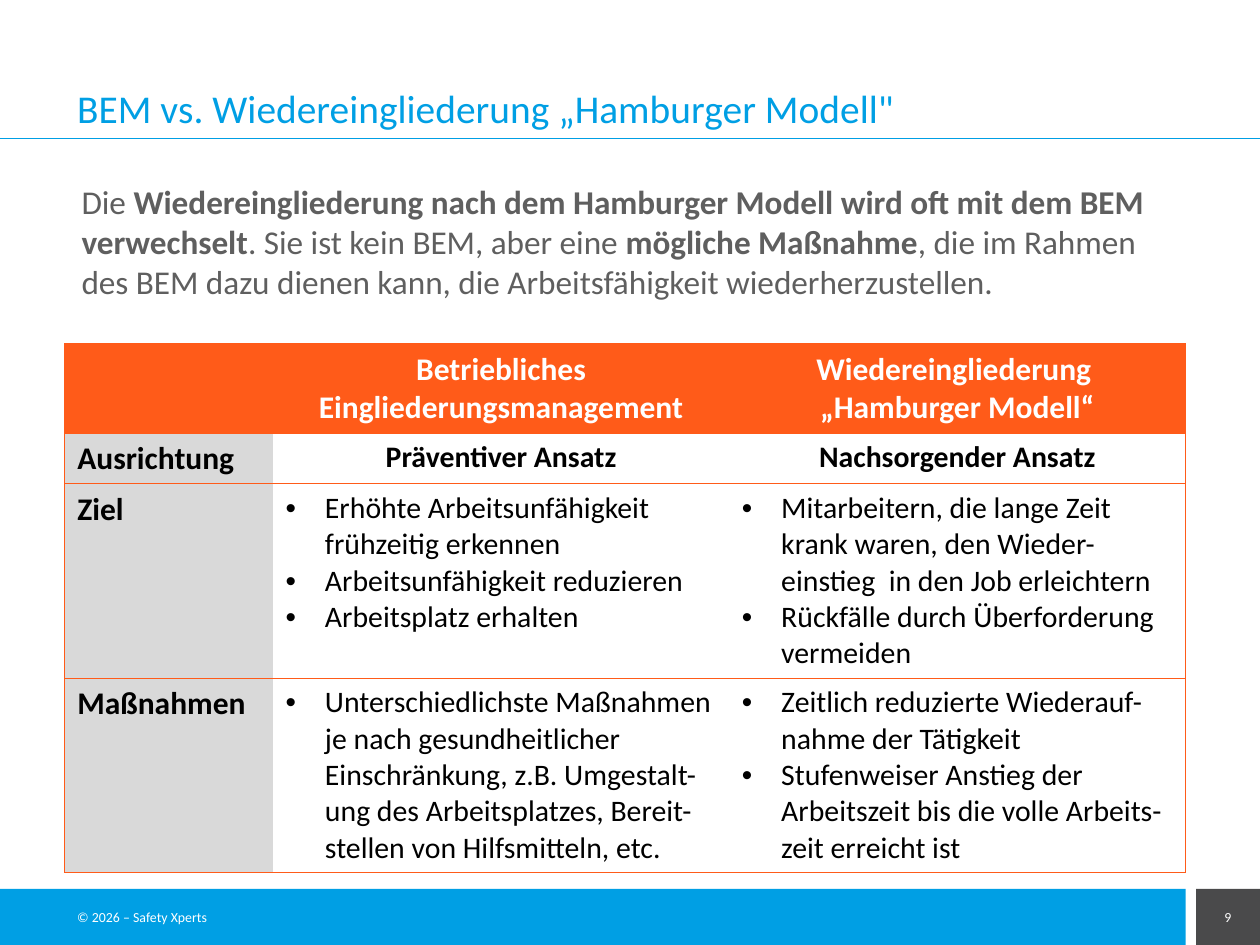
from lxml import etree
from pptx import Presentation
from pptx.dml.color import RGBColor
from pptx.enum.shapes import MSO_CONNECTOR, MSO_SHAPE
from pptx.enum.text import MSO_ANCHOR, PP_ALIGN
from pptx.oxml.ns import qn
from pptx.util import Pt

RECTANGLE = MSO_SHAPE.RECTANGLE
STRAIGHT = MSO_CONNECTOR.STRAIGHT
TOP, MIDDLE, BOTTOM = MSO_ANCHOR.TOP, MSO_ANCHOR.MIDDLE, MSO_ANCHOR.BOTTOM
LEFT, CENTER = PP_ALIGN.LEFT, PP_ALIGN.CENTER

BLUE, ORANGE, WHITE, BLACK = "009FE4", "FF5B19", "FFFFFF", "000000"
DARK, GRAY, LIGHT = "4A4A4B", "5F5F5F", "D9D9D9"


def color(value):
    return RGBColor.from_string(value)


class SlideBuilder:
    font = "Calibri"
    line_width = 0.75
    indent = 22.5

    def __init__(self, page):
        self.page = page

    def bar(self, left, top, width, height, fill):
        shape = self.page.shapes.add_shape(
            RECTANGLE, Pt(left), Pt(top), Pt(width), Pt(height))
        shape.shadow.inherit = False
        shape.fill.solid()
        shape.fill.fore_color.rgb = color(fill)
        shape.line.fill.background()

    def rule(self, left, right, top, stroke):
        line = self.page.shapes.add_connector(
            STRAIGHT, Pt(left), Pt(top), Pt(right), Pt(top))
        line.line.color.rgb = color(stroke)
        line.line.width = Pt(self.line_width)
        etree.SubElement(line._element.spPr, qn("a:effectLst"))

    def span(self, paragraph, text, size, ink, bold=False):
        span = paragraph.add_run()
        span.text = text
        span.font.name = self.font
        span.font.size = Pt(size)
        span.font.bold = bold
        span.font.color.rgb = color(ink)

    def text(self, left, top, width, height, spans, size, ink,
             anchor=TOP, align=LEFT, spacing=None):
        box = self.page.shapes.add_textbox(
            Pt(left), Pt(top), Pt(width), Pt(height))
        frame = box.text_frame
        frame.word_wrap = True
        frame.vertical_anchor = anchor
        paragraph = frame.paragraphs[0]
        paragraph.alignment = align
        if spacing:
            paragraph.line_spacing = Pt(spacing)
        for content, bold in spans:
            self.span(paragraph, content, size, ink, bold)

    def bullet(self, paragraph):
        properties = paragraph._p.get_or_add_pPr()
        properties.set("marL", str(Pt(self.indent)))
        properties.set("indent", str(-Pt(self.indent)))
        etree.SubElement(properties, qn("a:buFont"), typeface="Arial")
        etree.SubElement(properties, qn("a:buChar"), char="•")

    def borders(self, cell, sides, stroke):
        properties = cell._tc.get_or_add_tcPr()
        for side in "LRTB":
            line = etree.SubElement(properties, qn(f"a:ln{side}"),
                                    w=str(Pt(self.line_width)))
            if side in sides:
                fill = etree.SubElement(line, qn("a:solidFill"))
                etree.SubElement(fill, qn("a:srgbClr"), val=stroke)
            else:
                etree.SubElement(line, qn("a:noFill"))

    def cell(self, cell, lines, size, ink, fill, sides,
             bold=False, align=LEFT, bullets=False):
        self.borders(cell, sides, ORANGE)
        cell.fill.solid()
        cell.fill.fore_color.rgb = color(fill)
        frame = cell.text_frame
        for index, content in enumerate(lines):
            paragraph = frame.add_paragraph() if index else frame.paragraphs[0]
            paragraph.alignment = align
            if bullets:
                self.bullet(paragraph)
            for part, piece in enumerate(content.split("\n")):
                if part:
                    paragraph.add_line_break()
                self.span(paragraph, piece, size, ink, bold)

    def table(self, left, top, widths, heights, rows):
        table = self.page.shapes.add_table(
            len(heights), len(widths), Pt(left), Pt(top),
            Pt(sum(widths)), Pt(sum(heights))).table
        for column, width in zip(table.columns, widths):
            column.width = Pt(width)
        for row, height in zip(table.rows, heights):
            row.height = Pt(height)
        last = len(widths) - 1
        for r, row in enumerate(rows):
            for c, lines in enumerate(row):
                sides = "TB" + ("L" if c == 0 else "") + ("R" if c == last else "")
                if r == 0:
                    style = dict(size=18, ink=WHITE, fill=ORANGE, bold=True, align=CENTER)
                elif c == 0:
                    style = dict(size=18, ink=BLACK, fill=LIGHT, bold=True)
                elif r == 1:
                    style = dict(size=17, ink=BLACK, fill=WHITE, bold=True, align=CENTER)
                else:
                    style = dict(size=17, ink=BLACK, fill=WHITE, bullets=True)
                self.cell(table.cell(r, c), lines, sides=sides, **style)


ROWS = [
    [[], ["Betriebliches Eingliederungsmanagement"],
     ["Wiedereingliederung \n„Hamburger Modell“"]],
    [["Ausrichtung"], ["Präventiver Ansatz"], ["Nachsorgender Ansatz"]],
    [["Ziel"],
     ["Erhöhte Arbeitsunfähigkeit frühzeitig erkennen",
      "Arbeitsunfähigkeit reduzieren",
      "Arbeitsplatz erhalten"],
     ["Mitarbeitern, die lange Zeit krank waren, den Wieder-einstieg  in den Job erleichtern",
      "Rückfälle durch Überforderung vermeiden"]],
    [["Maßnahmen"],
     ["Unterschiedlichste Maßnahmen je nach gesundheitlicher Einschränkung, "
      "z.B. Umgestalt-ung des Arbeitsplatzes, Bereit-stellen von Hilfsmitteln, etc."],
     ["Zeitlich reduzierte Wiederauf-nahme der Tätigkeit",
      "Stufenweiser Anstieg der Arbeitszeit bis die volle Arbeits-zeit erreicht ist"]],
]

INTRO = [
    ("Die ", False),
    ("Wiedereingliederung nach dem Hamburger Modell wird oft mit dem BEM verwechselt", True),
    (". Sie ist kein BEM, aber eine ", False),
    ("mögliche Maßnahme", True),
    (", die im Rahmen des BEM dazu dienen kann, die Arbeitsfähigkeit wiederherzustellen.", False),
]


def main():
    deck = Presentation()
    deck.slide_width, deck.slide_height = Pt(720), Pt(540)
    builder = SlideBuilder(deck.slides.add_slide(deck.slide_layouts[6]))

    # Footer bars and title rule
    builder.bar(0, 508, 677.5, 32, BLUE)
    builder.bar(683.5, 508, 36.5, 32, DARK)
    builder.rule(0, 720, 79, BLUE)

    # Title and introduction
    builder.text(37, 7, 663, 71.5, [("BEM vs. Wiedereingliederung „Hamburger Modell\"", False)],
                 22.5, BLUE, anchor=BOTTOM, spacing=24)
    builder.text(39.5, 100, 641, 76, INTRO, 19, GRAY)

    # Comparison table
    builder.table(37, 196.5, [119, 260.75, 260.75], [51, 29, 111, 111], ROWS)

    # Footer text
    builder.text(37, 514, 630, 20, [("© 2026 – Safety Xperts", False)], 7.9, WHITE, anchor=MIDDLE)
    builder.text(683.5, 514, 36.5, 20, [("9", False)], 7.9, WHITE, anchor=MIDDLE, align=CENTER)

    deck.save("out.pptx")


if __name__ == "__main__":
    main()
